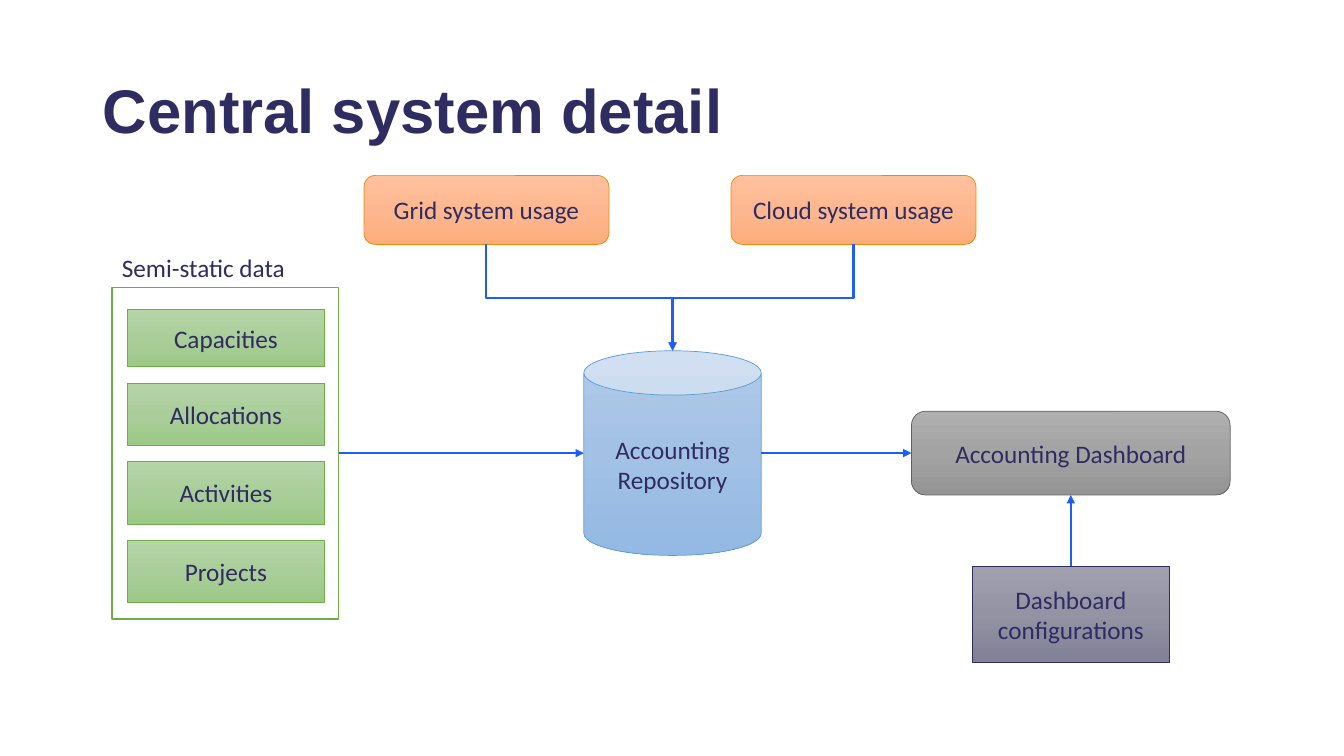
from copy import deepcopy

from lxml.etree import SubElement
from pptx import Presentation
from pptx.dml.color import RGBColor
from pptx.enum.shapes import MSO_CONNECTOR, MSO_SHAPE
from pptx.enum.text import MSO_ANCHOR, MSO_AUTO_SIZE, PP_ALIGN
from pptx.oxml.ns import qn
from pptx.util import Inches, Pt

# The slide is a grid of 100 columns and 100 rows
WIDTH, HEIGHT = Inches(13.33), Inches(7.5)
INK, ARROW = "2E2C61", "1E5DF8"
TOP, LEFT, BOTTOM, RIGHT = range(4)
ITEM_WIDTH = 14.7

# Line colour, then gradient from top to bottom
GREEN = "70AD47", ("B5D5A7", "AACE9A", "9CC987")
ORANGE = "F08900", ("FFC19E", "FDB790", "FDAD7C")
BLUE = "5B9BD5", ("B1CBE9", "A3C1E5", "93B9E4")
GREY = "616161", ("AFAFAF", "A3A3A3", "949494")
PURPLE = "2E2C61", ("A1A0AF", "9493A4", "808096")


def rgb(hex_colour):
    return RGBColor.from_string(hex_colour)


def col(columns):
    return int(WIDTH * columns / 100)


def row(rows):
    return int(HEIGHT * rows / 100)


def place(box):
    left, top, width, height = box
    return col(left), row(top), col(width), row(height)


def write(frame, words, size=18, font="Calibri", bold=False, align=PP_ALIGN.LEFT):
    frame.word_wrap = True
    paragraph = frame.paragraphs[0]
    paragraph.alignment = align
    run = paragraph.add_run()
    run.text = words
    run.font.size, run.font.name, run.font.bold = Pt(size), font, bold
    run.font.color.rgb = rgb(INK)
    return paragraph


def add_node(slide, kind, box, words, palette):
    outline, shades = palette
    node = slide.shapes.add_shape(kind, *place(box))
    node.shadow.inherit = False
    node.line.color.rgb = rgb(outline)
    node.line.width = Pt(0.5)
    node.fill.gradient()
    node.fill.gradient_angle = 270
    # A third stop joins the two that a new gradient has
    stops = node.fill._xPr.find(qn("a:gradFill")).find(qn("a:gsLst"))
    stops.append(deepcopy(stops[0]))
    for stop, position, shade in zip(node.fill.gradient_stops, (0, 0.5, 1), shades):
        stop.position = position
        stop.color.rgb = rgb(shade)
    node.text_frame.vertical_anchor = MSO_ANCHOR.MIDDLE
    write(node.text_frame, words, align=PP_ALIGN.CENTER)
    return node


def add_arrow(slide, kind, start, end):
    arrow = slide.shapes.add_connector(kind, *start, *end)
    arrow.line.color.rgb = rgb(ARROW)
    arrow.line.width = Pt(1.5)
    properties = arrow._element.spPr
    SubElement(properties.find(qn("a:ln")), qn("a:tailEnd"), type="triangle")
    SubElement(properties, qn("a:effectLst"))
    return arrow


def add_drop(slide, source, target):
    """Elbow arrow from the bottom of source to the top of target."""
    x1, y1 = source.left + source.width // 2, source.top + source.height
    x2, y2 = target.left + target.width // 2, target.top
    middle_x, middle_y = (x1 + x2) // 2, (y1 + y2) // 2
    half_run, half_drop = abs(x2 - x1) // 2, (y2 - y1) // 2
    # The elbow is laid on its side, then turned to leave downwards
    side, degrees = (1, 270) if x1 < x2 else (-1, 90)
    arrow = add_arrow(slide, MSO_CONNECTOR.ELBOW,
                      (middle_x + side * half_drop, middle_y - half_run),
                      (middle_x - side * half_drop, middle_y + half_run))
    arrow._element.spPr.find(qn("a:xfrm")).set("rot", str(degrees * 60000))


def add_title(slide, box):
    title = slide.shapes.title
    title.left, title.top, title.width, title.height = place(box)
    frame = title.text_frame
    frame.auto_size = MSO_AUTO_SIZE.NONE
    frame.vertical_anchor = MSO_ANCHOR.MIDDLE
    write(frame, "Central system detail", 44, "Arial", True).line_spacing = 0.9


def add_semi_static_data(slide, box):
    left, top, _, _ = box
    panel = slide.shapes.add_shape(MSO_SHAPE.RECTANGLE, *place(box))
    panel.shadow.inherit = False
    panel.fill.solid()
    panel.fill.fore_color.rgb = rgb("FFFFFF")
    panel.line.color.rgb = rgb(GREEN[0])
    panel.line.width = Pt(1)
    heading = slide.shapes.add_textbox(*place((left, top - 5.33, ITEM_WIDTH, 5.33)))
    write(heading.text_frame, "Semi-static data")
    # Bottom edges are evenly spaced; the first bar is a little lower
    bars = ("Capacities", 7.6), ("Allocations", 8.27), ("Activities", 8.27), ("Projects", 8.27)
    for index, (words, height) in enumerate(bars):
        bottom = top + 10.53 + 10.4 * index
        add_node(slide, MSO_SHAPE.RECTANGLE,
                 (left + 1.13, bottom - height, ITEM_WIDTH, height), words, GREEN)
    return panel


def add_usage(slide, box):
    left, top, width, height = box
    card = 18.23
    return [add_node(slide, MSO_SHAPE.ROUNDED_RECTANGLE, (x, top, card, height), words, ORANGE)
            for x, words in ((left, "Grid system usage"),
                             (left + width - card, "Cloud system usage"))]


def add_dashboard(slide, box):
    left, top, width, height = box
    dashboard = add_node(slide, MSO_SHAPE.ROUNDED_RECTANGLE, (left, top, width, 11.07),
                         "Accounting Dashboard", GREY)
    config_height = 12.67
    configurations = add_node(
        slide, MSO_SHAPE.RECTANGLE,
        (left + (width - ITEM_WIDTH) / 2, top + height - config_height, ITEM_WIDTH, config_height),
        "Dashboard configurations", PURPLE)
    arrow = add_arrow(slide, MSO_CONNECTOR.STRAIGHT, (0, 0), (0, 0))
    arrow.begin_connect(configurations, TOP)
    arrow.end_connect(dashboard, BOTTOM)
    return dashboard


def add_flows(slide, panel, usages, repository, dashboard):
    for usage in usages:
        add_drop(slide, usage, repository)
    middle = repository.top + repository.height // 2
    west = repository.left, middle
    east = repository.left + repository.width, middle
    add_arrow(slide, MSO_CONNECTOR.STRAIGHT, west, west).begin_connect(panel, RIGHT)
    add_arrow(slide, MSO_CONNECTOR.STRAIGHT, east, east).end_connect(dashboard, LEFT)


def main():
    deck = Presentation()
    deck.slide_width, deck.slide_height = WIDTH, HEIGHT
    slide = deck.slides.add_slide(deck.slide_layouts[5])
    add_title(slide, (6.9, 5.33, 86.27, 19.33))
    panel = add_semi_static_data(slide, (8.33, 38, 16.88, 43.87))
    usages = add_usage(slide, (27.08, 23.2, 45.54, 9.13))
    repository = add_node(slide, MSO_SHAPE.CAN, (43.44, 46.4, 13.2, 27.07),
                          "Accounting Repository", BLUE)
    dashboard = add_dashboard(slide, (67.82, 54.4, 23.71, 33.2))
    add_flows(slide, panel, usages, repository, dashboard)
    deck.save("out.pptx")


if __name__ == "__main__":
    main()
